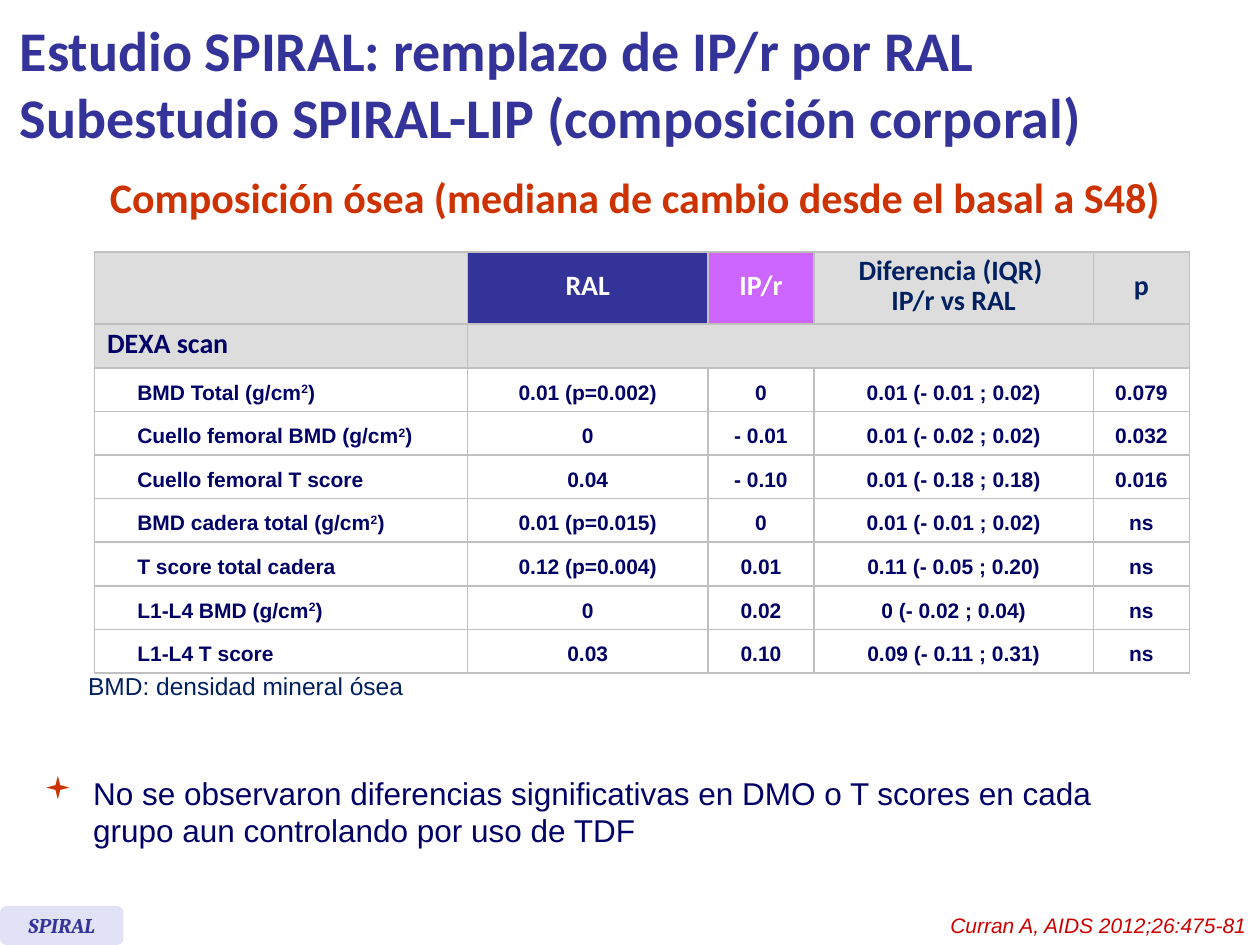
from pptx import Presentation
from pptx import util as u
from pptx.dml.color import RGBColor
from pptx.enum import shapes, text
from pptx.oxml import parse_xml
from pptx.oxml.ns import nsdecls

Inches, Pt = u.Inches, u.Pt
LEFT, MID, RIGHT = text.PP_ALIGN.LEFT, text.PP_ALIGN.CENTER, text.PP_ALIGN.RIGHT

BLUE = RGBColor(0x33, 0x33, 0x99)
NAVY = RGBColor(0x00, 0x00, 0x66)
DEEP = RGBColor(0x00, 0x20, 0x60)
RUST = RGBColor(0xCC, 0x33, 0x00)
RED = RGBColor(0xCC, 0x00, 0x00)
PINK = RGBColor(0xCC, 0x66, 0xFF)
PALE = RGBColor(0xE2, 0xE2, 0xF6)
GRAY = RGBColor(0xDD, 0xDD, 0xDD)
EDGE = RGBColor(0xC0, 0xC0, 0xC0)
WHITE = RGBColor(0xFF, 0xFF, 0xFF)

COLS = [0.24, 2.72, 1.91, 0.84, 2.22, 0.76]
ROWS = [0.57] + [2.77 / 8] * 8
HEADS = [("RAL", WHITE, BLUE), ("IP/r", WHITE, PINK),
         ("Diferencia (IQR) \nIP/r vs RAL", DEEP, GRAY), ("p", DEEP, GRAY)]
SCANS = [
    ("BMD Total (g/cm^2^)", "0.01 (p=0.002)", "0", "0.01 (- 0.01 ; 0.02)", "0.079"),
    ("Cuello femoral BMD (g/cm^2^)", "0", "- 0.01", "0.01 (- 0.02 ; 0.02)", "0.032"),
    ("Cuello femoral T score", "0.04", "- 0.10", "0.01 (- 0.18 ; 0.18)", "0.016"),
    ("BMD cadera total (g/cm^2^)", "0.01 (p=0.015)", "0", "0.01 (- 0.01 ; 0.02)", "ns"),
    ("T score total cadera", "0.12 (p=0.004)", "0.01", "0.11 (- 0.05 ; 0.20)", "ns"),
    ("L1-L4 BMD (g/cm^2^)", "0", "0.02", "0 (- 0.02 ; 0.04)", "ns"),
    ("L1-L4 T score", "0.03", "0.10", "0.09 (- 0.11 ; 0.31)", "ns"),
]


def write(frame, words, size=12, face="Arial", color=NAVY, bold=False,
          slant=False, align=LEFT, lead=None, bullet=None):
    for i, line in enumerate(words.split("\n")):
        para = frame.add_paragraph() if i else frame.paragraphs[0]
        para.alignment = align
        if lead:
            para.line_spacing = Pt(lead)
        if bullet:
            props = para._p.get_or_add_pPr()
            props.set("marL", str(Inches(0.39)))
            props.set("indent", str(-Inches(0.39)))
            for mark in (f'buClr {nsdecls("a")}><a:srgbClr val="{RUST}"/></a:buClr>',
                         f'buFont {nsdecls("a")} typeface="Wingdings"/>',
                         f'buChar {nsdecls("a")} char="{bullet}"/>'):
                props.append(parse_xml("<a:" + mark))
        if not line:
            para._p.append(parse_xml(
                f'<a:endParaRPr {nsdecls("a")} sz="{size * 100}"/>'))
        for j, part in enumerate(line.split("^")):
            if not part:
                continue
            run = para.add_run()
            run.text = part
            font = run.font
            font.size, font.name = Pt(size), face
            font.bold, font.italic = bold, slant
            font.color.rgb = color
            if j % 2:
                run._r.get_or_add_rPr().set("baseline", "30000")


def label(slide, box, words, wrap=True, anchor=text.MSO_ANCHOR.TOP, **style):
    frame = slide.shapes.add_textbox(*map(Inches, box)).text_frame
    frame.word_wrap = wrap
    frame.vertical_anchor = anchor
    write(frame, words, **style)


def border(cell, hidden=""):
    props = cell._tc.get_or_add_tcPr()
    for i, side in enumerate("LRTB"):
        paint = ("<a:noFill/>" if side == hidden else
                 f'<a:solidFill><a:srgbClr val="{EDGE}"/></a:solidFill>')
        props.insert(i, parse_xml(
            f'<a:ln{side} {nsdecls("a")} w="{Pt(1)}">{paint}</a:ln{side}>'))


def fill(cell, words="", back=WHITE, hidden="", **style):
    cell.fill.solid()
    cell.fill.fore_color.rgb = back
    cell.vertical_anchor = text.MSO_ANCHOR.MIDDLE
    border(cell, hidden)
    write(cell.text_frame, words, bold=True, lead=17, **style)


def grid(slide, box):
    table = slide.shapes.add_table(len(ROWS), len(COLS), *map(Inches, box)).table
    table.first_row = table.horz_banding = False
    for col, width in zip(table.columns, COLS):
        col.width = Inches(width)
    for row, height in zip(table.rows, ROWS):
        row.height = Inches(height)
    for r, first, last in [(0, 0, 1), (1, 0, 1), (1, 2, 5)]:
        table.cell(r, first).merge(table.cell(r, last))
    head = dict(size=16, face="Calibri")
    for c in range(2):
        fill(table.cell(0, c), back=GRAY)
    for c, (words, color, back) in enumerate(HEADS, 2):
        fill(table.cell(0, c), words, back, color=color, align=MID, **head)
    fill(table.cell(1, 0), "DEXA scan", GRAY, **head)
    for c in range(1, len(COLS)):
        fill(table.cell(1, c), back=GRAY)
    for r, scan in enumerate(SCANS, 2):
        fill(table.cell(r, 0), hidden="R")
        fill(table.cell(r, 1), scan[0], hidden="L")
        for c, value in enumerate(scan[1:], 2):
            fill(table.cell(r, c), value, align=MID)


def badge(slide, box):
    tag = slide.shapes.add_shape(shapes.MSO_SHAPE.ROUNDED_RECTANGLE, *map(Inches, box))
    tag.adjustments[0] = 0.17
    tag.shadow.inherit = False
    tag.fill.solid()
    tag.fill.fore_color.rgb = PALE
    tag.line.fill.background()
    tag.text_frame.word_wrap = False
    tag.text_frame.vertical_anchor = text.MSO_ANCHOR.MIDDLE
    write(tag.text_frame, "SPIRAL", face="Cambria", color=BLUE,
          bold=True, slant=True, align=MID)


def main():
    deck = Presentation()
    deck.slide_width, deck.slide_height = Inches(10), Inches(7.5)
    slide = deck.slides.add_slide(deck.slide_layouts[6])
    label(slide, (0.06, 0.05, 8.96, 1.21),
          "Estudio SPIRAL: remplazo de IP/r por RAL\n"
          "Subestudio SPIRAL-LIP (composición corporal)",
          anchor=text.MSO_ANCHOR.MIDDLE, size=32, face="Calibri", color=BLUE, bold=True)
    grid(slide, (0.75, 2, sum(COLS), sum(ROWS)))
    label(slide, (0.58, 1.5, 8.92, 0.31),
          "Composición ósea (mediana de cambio desde el basal a S48)",
          size=24, face="Calibri", color=RUST, bold=True, align=MID, lead=15.2)
    label(slide, (0.59, 5.28, 2.72, 0.34), "BMD: densidad mineral ósea",
          wrap=False, size=14, color=DEEP, align=MID)
    label(slide, (0.25, 6.09, 9.05, 0.71),
          "No se observaron diferencias significativas en DMO o T scores "
          "en cada grupo aun controlando por uso de TDF", size=18, bullet="▪")
    badge(slide, (0, 7.19, 0.98, 0.31))
    label(slide, (6.49, 7.19, 3.5, 0.3), "Curran A, AIDS 2012;26:475-81",
          color=RED, slant=True, align=RIGHT)
    deck.save("out.pptx")


if __name__ == "__main__":
    main()
